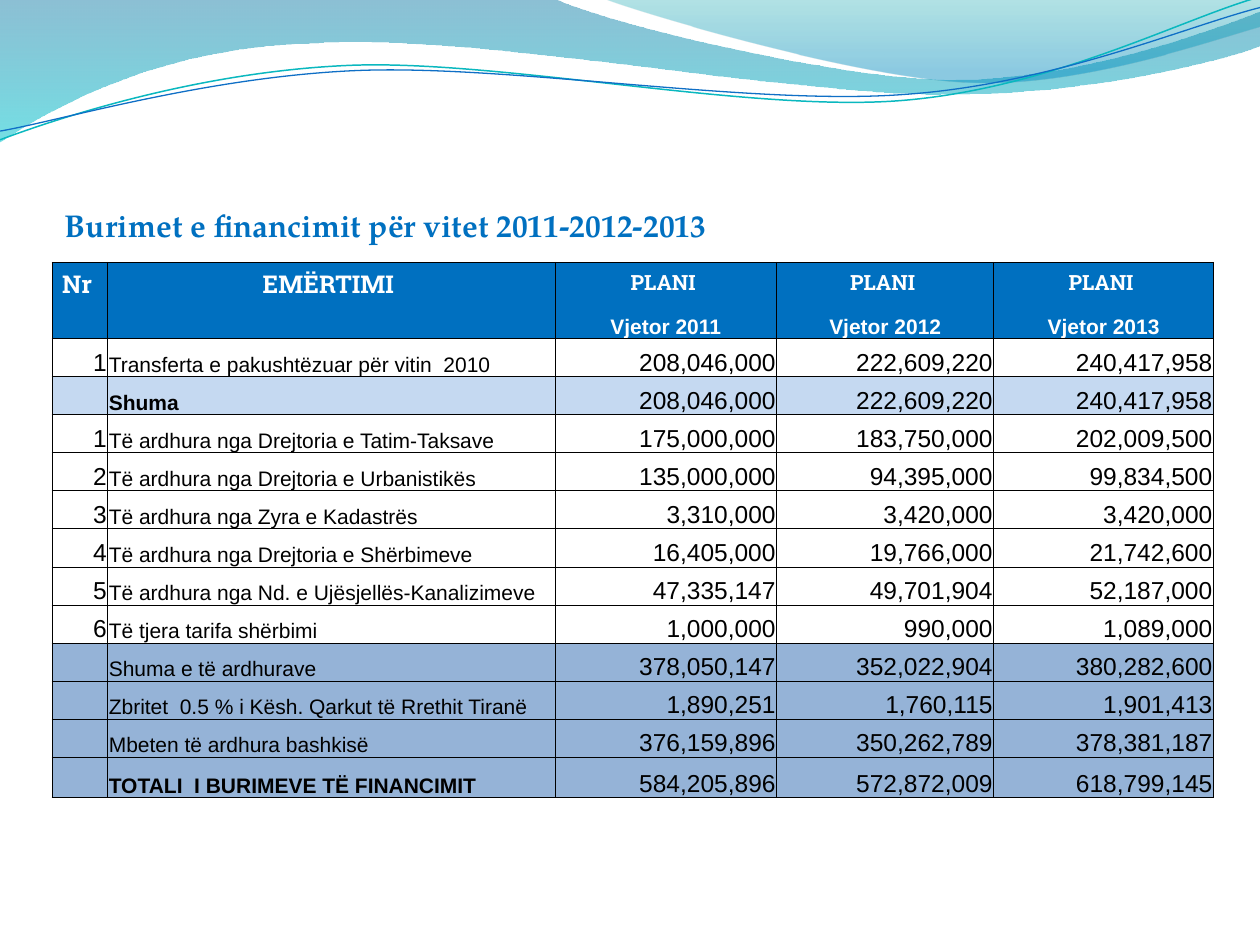
from lxml import etree
from pptx import Presentation
from pptx import util as u
from pptx.dml.color import RGBColor
from pptx.enum import text
from pptx.oxml.ns import qn

COLORS = {
    "blue": "0070C0", "white": "FFFFFF", "black": "000000",
    "subtotal": "C5D9F1", "total": "95B3D7",
    "deep": "0074A1", "cyan": "00C6CF", "teal": "00A1A9", "sky": "008BBF",
    "teal_line": "0AB8BF", "blue_line": "0F6FC6",
}
LEFT, CENTER, RIGHT = text.PP_ALIGN.LEFT, text.PP_ALIGN.CENTER, text.PP_ALIGN.RIGHT
MIDDLE, BOTTOM = text.MSO_ANCHOR.MIDDLE, text.MSO_ANCHOR.BOTTOM
HEADING_FONT, BODY_FONT, TITLE_FONT = "Roboto Slab", "Arial", "TeX Gyre Pagella"

# Outlines in points: a pair is a straight step, six numbers are a Bézier curve.
WAVE_BAND = [
    (0, 0), (316.8, -0.7), (342.7, 12.2, 478.1, 45.4, 545.8, 45.4),
    (614.2, 45.4, 689.8, 18.7, 720, 6.5), (720.7, 25.9),
    (707.8, 31.7, 626.4, 54.7, 537.1, 54), (447.8, 54, 275, 20.2, 185, 24.5),
    (92.9, 25.9, 33.1, 59.8, -0.7, 81.4), (0, 0)]
WAVE_CORNER = [
    (344.9, -0.7), (366.5, 7.9, 491, 44.6, 553.7, 46.8),
    (616.3, 49.7, 691.9, 23, 720, 15.1), (720, 0), (344.9, -0.7)]
TEAL_CURVE = [
    (0, 79.9), (34.6, 67, 113.8, 41, 199.4, 37.4),
    (284.4, 33.8, 427, 64.1, 513.4, 57.6), (599.8, 51.1, 675.4, 10.8, 718.6, -1.4)]
BLUE_CURVE = [
    (0, 74.9), (33.8, 69.1, 118.1, 43.9, 203.8, 40.3),
    (290.2, 36.7, 429.8, 60.5, 516.2, 54), (601.9, 48.2, 677.5, 15.1, 720, 4.3)]

COLUMN_WIDTHS = [31.7, 255.5, 126.8, 124, 125.6]
HEADERS = [["Nr ", "EMËRTIMI ", "PLANI ", "PLANI ", "PLANI "],
           ["", "", "Vjetor 2011", "Vjetor 2012", "Vjetor 2013"]]
# Row fill, bold label, cell texts
BODY = [
    (None, False, ["1", "Transferta e pakushtëzuar për vitin  2010",
                   "208,046,000", "222,609,220", "240,417,958"]),
    ("subtotal", True, ["", "Shuma", "208,046,000", "222,609,220", "240,417,958"]),
    (None, False, ["1", "Të ardhura nga Drejtoria e Tatim-Taksave",
                   "175,000,000", "183,750,000", "202,009,500"]),
    (None, False, ["2", "Të ardhura nga Drejtoria e Urbanistikës",
                   "135,000,000", "94,395,000", "99,834,500"]),
    (None, False, ["3", "Të ardhura nga Zyra e Kadastrës",
                   "3,310,000", "3,420,000", "3,420,000"]),
    (None, False, ["4", "Të ardhura nga Drejtoria e Shërbimeve",
                   "16,405,000", "19,766,000", "21,742,600"]),
    (None, False, ["5", "Të ardhura nga Nd. e Ujësjellës-Kanalizimeve",
                   "47,335,147", "49,701,904", "52,187,000"]),
    (None, False, ["6", "Të tjera tarifa shërbimi", "1,000,000", "990,000", "1,089,000"]),
    ("total", False, ["", "Shuma e të ardhurave",
                      "378,050,147", "352,022,904", "380,282,600"]),
    ("total", False, ["", "Zbritet  0.5 % i Kësh. Qarkut të Rrethit Tiranë",
                      "1,890,251", "1,760,115", "1,901,413"]),
    ("total", False, ["", "Mbeten të ardhura bashkisë",
                      "376,159,896", "350,262,789", "378,381,187"]),
    ("total", True, ["", "TOTALI  I BURIMEVE TË FINANCIMIT",
                     "584,205,896", "572,872,009", "618,799,145"]),
]


def rgb(name):
    return RGBColor.from_string(COLORS[name])


class SlideBuilder:
    def __init__(self, presentation):
        self.slide = presentation.slides.add_slide(presentation.slide_layouts[6])

    def outline(self, outline, closed):
        """Build a freeform through all points, then join curve points in threes."""
        points = [(u.Pt(segment[i]), u.Pt(segment[i + 1]))
                  for segment in outline for i in range(0, len(segment), 2)]
        builder = self.slide.shapes.build_freeform(*points[0], scale=1.0)
        builder.add_line_segments(points[1:], close=closed)
        shape = builder.convert_to_shape()
        shape.shadow.inherit = False
        steps = iter(list(shape._element.iter(qn("a:lnTo"))))
        for segment in outline[1:]:
            step = next(steps)
            if len(segment) == 6:
                curve = etree.Element(qn("a:cubicBezTo"))
                step.addprevious(curve)
                for point_step in (step, next(steps), next(steps)):
                    curve.append(point_step[0])
                    point_step.getparent().remove(point_step)
        return shape

    def wave(self, outline, stops):
        """Fill an outline from top to bottom; stops are (position, colour, opacity %)."""
        shape = self.outline(outline, True)
        shape.line.fill.background()
        shape.fill.gradient()
        shape.fill.gradient_angle = 270
        for stop, (position, color, _) in zip(shape.fill.gradient_stops, stops):
            stop.position = position
            stop.color.rgb = rgb(color)
        for element, (_, _, opacity) in zip(shape._element.iter(qn("a:srgbClr")), stops):
            etree.SubElement(element, qn("a:alpha"), val=str(opacity * 1000))

    def curve(self, outline, color, width):
        shape = self.outline(outline, False)
        shape.fill.background()
        shape.line.color.rgb = rgb(color)
        shape.line.width = u.Pt(width)

    def style(self, paragraph, font, size, color, bold):
        for run in paragraph.runs:
            run.font.name = font
            run.font.size = u.Pt(size)
            run.font.bold = bold
            run.font.color.rgb = rgb(color)

    def title(self, content, left, top, width, height):
        box = self.slide.shapes.add_textbox(*map(u.Pt, (left, top, width, height)))
        box.text_frame.word_wrap = False
        box.text_frame.text = content
        self.style(box.text_frame.paragraphs[0], TITLE_FONT, 18, "blue", True)

    def table(self, rows, left, top, widths, heights):
        frame = self.slide.shapes.add_table(
            len(rows), len(widths),
            *map(u.Pt, (left, top, sum(widths), sum(heights))))
        table = frame.table
        table.first_row = table.horz_banding = False
        for column, width in zip(table.columns, widths):
            column.width = u.Pt(width)
        for row, height in zip(table.rows, heights):
            row.height = u.Pt(height)
        return table

    def borders(self, cell, widths):
        """Draw the left, right, top and bottom border; width 0 hides one."""
        properties = cell._tc.get_or_add_tcPr()
        for side, width in zip("LRTB", widths):
            line = etree.SubElement(properties, qn("a:ln" + side), w=str(u.Pt(width)))
            if width:
                fill = etree.SubElement(line, qn("a:solidFill"))
                etree.SubElement(fill, qn("a:srgbClr"), val=COLORS["black"])
            else:
                etree.SubElement(line, qn("a:noFill"))

    def cell(self, cell, content, fill, align, anchor, font, size, color, bold):
        cell.margin_left = cell.margin_right = cell.margin_top = u.Pt(0.6)
        cell.margin_bottom = 0
        cell.vertical_anchor = anchor
        if fill:
            cell.fill.solid()
            cell.fill.fore_color.rgb = rgb(fill)
        else:
            cell.fill.background()
        paragraph = cell.text_frame.paragraphs[0]
        paragraph.alignment = align
        if content:
            paragraph.text = content
            self.style(paragraph, font, size, color, bold)
        else:
            etree.SubElement(paragraph._p, qn("a:endParaRPr"), sz=str(size * 100))


def add_budget_table(builder):
    rows = HEADERS + [texts for _, _, texts in BODY]
    heights = [21.75] * (len(rows) - 1) + [23.2]
    table = builder.table(rows, 29.9, 150, COLUMN_WIDTHS, heights)
    last_row, last_column = len(rows) - 1, len(COLUMN_WIDTHS) - 1
    for r, texts in enumerate(rows):
        for c, content in enumerate(texts):
            cell = table.cell(r, c)
            builder.borders(cell, (
                1 if c == 0 else 0.5, 1 if c == last_column else 0.5,
                {0: 1, 1: 0}.get(r, 0.5), {0: 0, last_row: 1}.get(r, 0.5)))
            if r < len(HEADERS):
                anchor = MIDDLE if r == 0 and c > 1 else BOTTOM
                font = HEADING_FONT if r == 0 else BODY_FONT
                builder.cell(cell, content, "blue", CENTER, anchor, font,
                             14 if c < 2 else 12, "white", True)
            else:
                fill, bold_label, _ = BODY[r - len(HEADERS)]
                label = c == 1
                builder.cell(cell, content, fill, LEFT if label else RIGHT, BOTTOM,
                             BODY_FONT, 12 if label else 14, "black", label and bold_label)


def main():
    presentation = Presentation()
    presentation.slide_width, presentation.slide_height = u.Pt(720), u.Pt(540)
    builder = SlideBuilder(presentation)
    builder.wave(WAVE_BAND, [(0, "deep", 45), (1, "cyan", 55)])
    builder.wave(WAVE_CORNER, [(0, "teal", 30), (0.8, "sky", 45)])
    builder.curve(TEAL_CURVE, "teal_line", 0.85)
    builder.curve(BLUE_CURVE, "blue_line", 0.75)
    add_budget_table(builder)
    builder.title("Burimet e financimit për vitet 2011-2012-2013", 30, 114, 387, 29)
    presentation.save("out.pptx")


if __name__ == "__main__":
    main()
